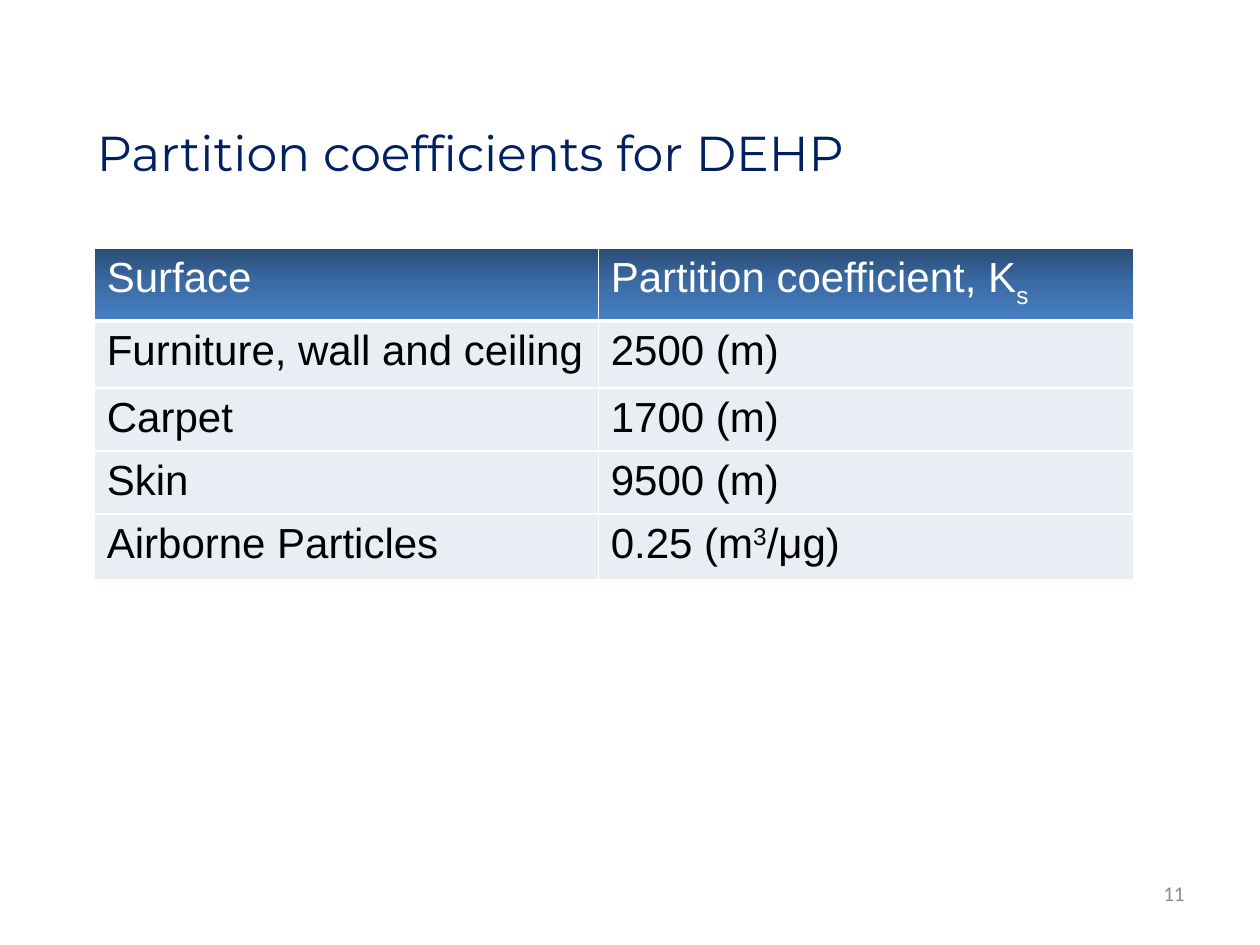
from dataclasses import dataclass

from lxml.etree import SubElement as Sub
from pptx import Presentation
from pptx.dml.color import RGBColor as Rgb
from pptx.enum.text import MSO_ANCHOR as Anchor, PP_ALIGN as Align
from pptx.oxml.ns import qn
from pptx.util import Cm, Pt


@dataclass(frozen=True)
class Theme:
    title: str = "002060"
    number: str = "8C8C8C"
    light: str = "FFFFFF"
    dark: str = "000000"
    band: str = "E9EDF4"
    head: tuple = ((0, "2A4C75"), (50, "3C6CA6"), (100, "4780C5"))
    title_size: int = 28
    table_size: int = 24
    number_size: int = 12
    title_font: str = "Montserrat"
    table_font: str = "Arial"
    number_font: str = "Calibri"


def write(para, text, font, size, color, base=0):
    """Add a run; base is the super- or subscript shift in percent."""
    run = para.add_run()
    run.text = text
    run.font.name = font
    run.font.size = Pt(size)
    run.font.color.rgb = Rgb.from_string(color)
    if base:
        run.font._element.set("baseline", str(base * 1000))


def paint(parent, color):
    Sub(Sub(parent, qn("a:solidFill")), qn("a:srgbClr"), val=color)


def shade(parent, stops):
    """Add a gradient that runs from top to bottom."""
    grad = Sub(parent, qn("a:gradFill"), rotWithShape="1")
    group = Sub(grad, qn("a:gsLst"))
    for place, color in stops:
        stop = Sub(group, qn("a:gs"), pos=str(place * 1000))
        Sub(stop, qn("a:srgbClr"), val=color)
    Sub(grad, qn("a:lin"), ang="5400000", scaled="0")


class Deck:
    def __init__(self, theme):
        self.theme = theme
        self.show = Presentation()
        self.show.slide_width, self.show.slide_height = Cm(25.4), Cm(19.05)
        self.slide = self.show.slides.add_slide(self.show.slide_layouts[5])

    def title(self, text, left, top, width, height):
        t, box = self.theme, self.slide.shapes.title
        box.left, box.top = Cm(left), Cm(top)
        box.width, box.height = Cm(width), Cm(height)
        box.text_frame.vertical_anchor = Anchor.MIDDLE
        para = box.text_frame.paragraphs[0]
        para.alignment = Align.LEFT
        write(para, text, t.title_font, t.title_size, t.title)

    def number(self, text, left, top, width, height):
        t = self.theme
        box = self.slide.shapes.add_textbox(
            Cm(left), Cm(top), Cm(width), Cm(height))
        frame = box.text_frame
        frame.word_wrap = True
        frame.vertical_anchor = Anchor.MIDDLE
        para = frame.paragraphs[0]
        para.alignment = Align.RIGHT
        write(para, text, t.number_font, t.number_size, t.number)

    def table(self, rows, left, top, widths, heights):
        grid = self.slide.shapes.add_table(
            len(rows), len(widths), Cm(left), Cm(top),
            Cm(sum(widths)), Cm(sum(heights))).table
        for col, width in zip(grid.columns, widths):
            col.width = Cm(width)
        for row, height, texts in zip(grid.rows, heights, rows):
            row.height = Cm(height)
            for cell, parts in zip(row.cells, texts):
                self.cell(cell, parts, row is grid.rows[0] or texts is rows[0])

    def cell(self, cell, parts, head):
        t = self.theme
        para = cell.text_frame.paragraphs[0]
        props = para._p.get_or_add_pPr()
        props.set("marL", str(Cm(0.95)))
        props.set("indent", str(-Cm(0.95)))
        for text, base in parts:
            write(para, text, t.table_font, t.table_size,
                  t.light if head else t.dark, base)
        props = cell._tc.get_or_add_tcPr()
        for side in "LRTB":
            width = 3 if head and side == "B" else 1
            paint(Sub(props, qn(f"a:ln{side}"), w=str(Pt(width))), t.light)
        if head:
            shade(props, t.head)
        else:
            paint(props, t.band)


def plain(text):
    return [(text, 0)]


ROWS = [
    [plain("Surface"), [("Partition coefficient, K", 0), ("s", -30)]],
    [plain("Furniture, wall and ceiling"), plain("2500 (m)")],
    [plain("Carpet"), plain("1700 (m)")],
    [plain("Skin"), plain("9500 (m)")],
    [plain("Airborne Particles"), [("0.25 (m", 0), ("3", 30), ("/μg)", 0)]],
]


def main():
    deck = Deck(Theme())
    deck.number("11", 18.2, 17.35, 5.93, 1.32)
    deck.title("Partition coefficients for DEHP", 1.7, 1.48, 22.86, 3.18)
    deck.table(ROWS, 1.9, 5, (10.16, 10.8), (1.47, 1.35, 1.27, 1.27, 1.32))
    deck.show.save("out.pptx")


if __name__ == "__main__":
    main()
